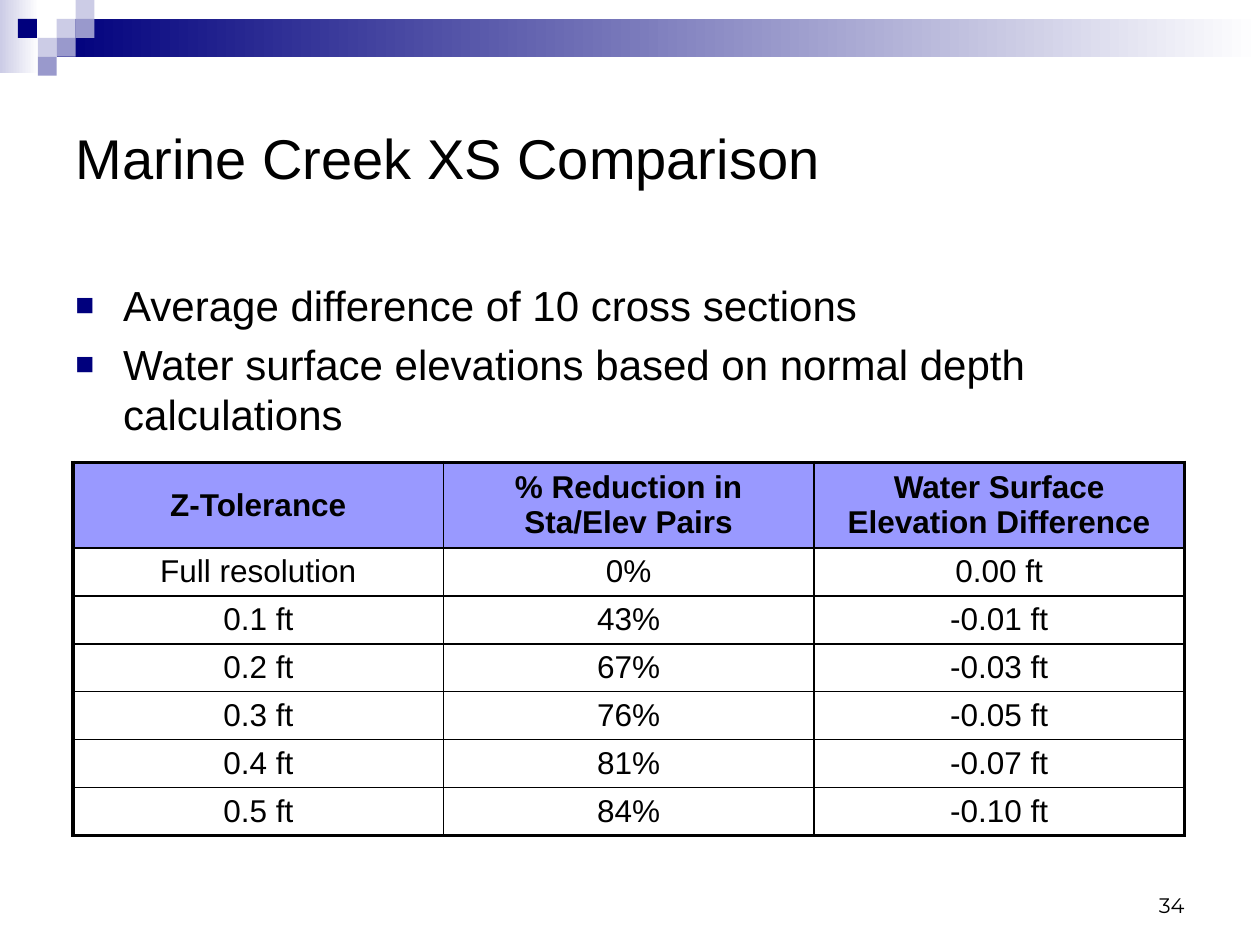
from pptx import Presentation
from pptx.dml.color import RGBColor
from pptx.enum.shapes import MSO_SHAPE
from pptx.enum.text import MSO_ANCHOR, MSO_AUTO_SIZE, PP_ALIGN
from pptx.oxml import parse_xml
from pptx.oxml.ns import nsdecls
from pptx.util import Inches, Pt

UNIT = 0.15
NAVY, LILAC, PALE, WHITE = "00007D", "9999CC", "CCCCE6", "FFFFFF"
SQUARES = [
    (3, 1, PALE), (4, 0, PALE), (4, 1, LILAC), (2, 2, PALE),
    (0.95, 1, NAVY), (3, 2, LILAC), (2, 3, LILAC),
]
BULLETS = [
    "Average difference of 10 cross sections",
    "Water surface elevations based on normal depth calculations",
]
ROWS = [
    ("Z-Tolerance", "% Reduction in Sta/Elev Pairs", "Water Surface Elevation Difference"),
    ("Full resolution", "0%", "0.00 ft"),
    ("0.1 ft", "43%", "-0.01 ft"),
    ("0.2 ft", "67%", "-0.03 ft"),
    ("0.3 ft", "76%", "-0.05 ft"),
    ("0.4 ft", "81%", "-0.07 ft"),
    ("0.5 ft", "84%", "-0.10 ft"),
]


def rgb(value):
    return RGBColor.from_string(value)


def box(*lengths):
    return [Inches(n) for n in lengths]


def apply(target, values):
    for name, value in values.items():
        setattr(target, name, value)


def write(p, text, size, font="Arial", bold=False, **layout):
    apply(p, layout)
    r = p.add_run()
    r.text = text
    apply(r.font, {"size": Pt(size), "name": font, "bold": bold})
    r.font.color.rgb = rgb("000000")


def add_rect(s, place, *colours):
    sp = s.shapes.add_shape(MSO_SHAPE.RECTANGLE, *box(*place))
    sp.shadow.inherit = False
    sp.line.fill.background()
    if len(colours) == 1:
        sp.fill.solid()
        sp.fill.fore_color.rgb = rgb(colours[0])
        return
    sp.fill.gradient()
    sp.fill.gradient_angle = 0
    for stop, colour, position in zip(sp.fill.gradient_stops, colours, (0, 1)):
        stop.color.rgb = rgb(colour)
        stop.position = position


def add_banner(s):
    add_rect(s, (0, 0, 0.31, 0.58), PALE, WHITE)
    add_rect(s, (3 * UNIT, UNIT, 10 - 3 * UNIT, 2 * UNIT), NAVY, WHITE)
    for col, row, colour in SQUARES:
        add_rect(s, (col * UNIT, row * UNIT, UNIT, UNIT), colour)


def add_title(s, text):
    sp = s.shapes.title
    left, top, width, height = box(0.5, 0.5, 9, 1.5)
    apply(sp, {"left": left, "top": top, "width": width, "height": height})
    tf = sp.text_frame
    apply(tf, {"vertical_anchor": MSO_ANCHOR.MIDDLE, "auto_size": MSO_AUTO_SIZE.NONE})
    write(tf.paragraphs[0], text, 32, alignment=PP_ALIGN.LEFT)


def add_text_box(s, place, anchor):
    tf = s.shapes.add_textbox(*box(*place)).text_frame
    apply(tf, {"word_wrap": True, "vertical_anchor": anchor})
    return tf


def add_bullet(p):
    pPr = p._p.get_or_add_pPr()
    pPr.set("marL", str(Inches(0.38)))
    pPr.set("indent", str(-Inches(0.38)))
    for xml in (
        f'<a:buClr {nsdecls("a")}><a:srgbClr val="{NAVY}"/></a:buClr>',
        f'<a:buSzPct {nsdecls("a")} val="75000"/>',
        f'<a:buFont {nsdecls("a")} typeface="Arial"/>',
        f'<a:buChar {nsdecls("a")} char="■"/>',
    ):
        pPr.append(parse_xml(xml))


def add_bullets(s, items):
    tf = add_text_box(s, (0.5, 2.17, 9, 1.75), MSO_ANCHOR.TOP)
    for i, text in enumerate(items):
        p = tf.add_paragraph() if i else tf.paragraphs[0]
        add_bullet(p)
        write(p, text, 24, space_before=Pt(4.8 if i else 0))


def set_borders(cell, outer):
    tcPr = cell._tc.get_or_add_tcPr()
    for i, (side, is_outer) in enumerate(outer.items()):
        width = Pt(2.25 if is_outer else 1)
        tcPr.insert(i, parse_xml(
            f'<a:{side} {nsdecls("a")} w="{width}"><a:solidFill>'
            f'<a:srgbClr val="000000"/></a:solidFill></a:{side}>'))


def add_data_table(s, rows):
    last_row, last_col = len(rows) - 1, len(rows[0]) - 1
    place = box(0.58, 3.67, 8.82, 0.66 + 0.38 * last_row)
    table = s.shapes.add_table(last_row + 1, last_col + 1, *place).table
    apply(table, {"first_row": False, "horz_banding": False})
    for i, values in enumerate(rows):
        table.rows[i].height = Inches(0.38 if i else 0.66)
        for j, text in enumerate(values):
            cell = table.cell(i, j)
            apply(cell, {"vertical_anchor": MSO_ANCHOR.MIDDLE,
                         "margin_top": Inches(0.04), "margin_bottom": Inches(0.04)})
            if i:
                cell.fill.background()
            else:
                cell.fill.solid()
                cell.fill.fore_color.rgb = rgb("9999FF")
            set_borders(cell, {"lnL": j == 0, "lnR": j == last_col,
                               "lnT": i == 0, "lnB": i == last_row})
            write(cell.text_frame.paragraphs[0], text, 18, bold=i == 0,
                  alignment=PP_ALIGN.CENTER)


def add_page_number(s, text):
    tf = add_text_box(s, (7.17, 6.83, 2.33, 0.5), MSO_ANCHOR.BOTTOM)
    write(tf.paragraphs[0], text, 12, "Montserrat", alignment=PP_ALIGN.RIGHT)


def main():
    prs = Presentation()
    apply(prs, {"slide_width": Inches(10), "slide_height": Inches(7.5)})
    s = prs.slides.add_slide(prs.slide_layouts[5])
    add_banner(s)
    add_page_number(s, "34")
    add_title(s, "Marine Creek XS Comparison")
    add_bullets(s, BULLETS)
    add_data_table(s, ROWS)
    prs.save("out.pptx")


if __name__ == "__main__":
    main()
